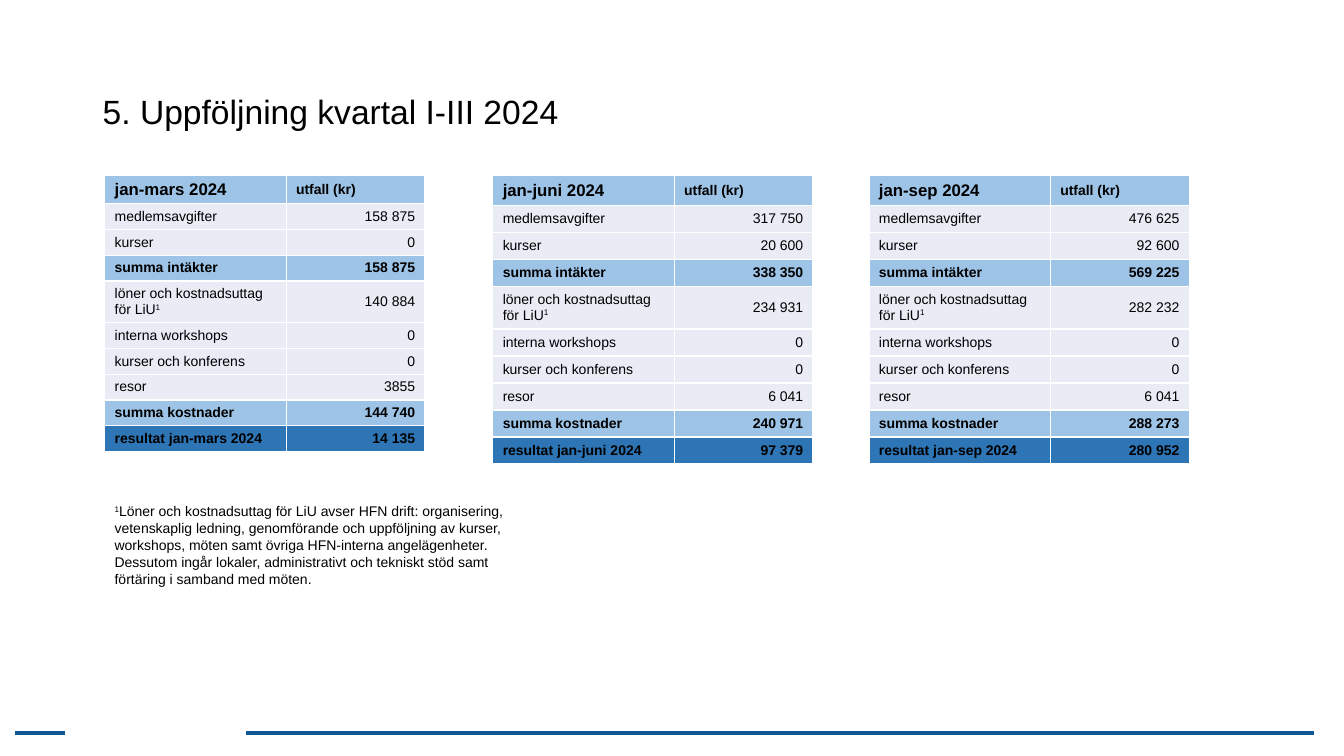
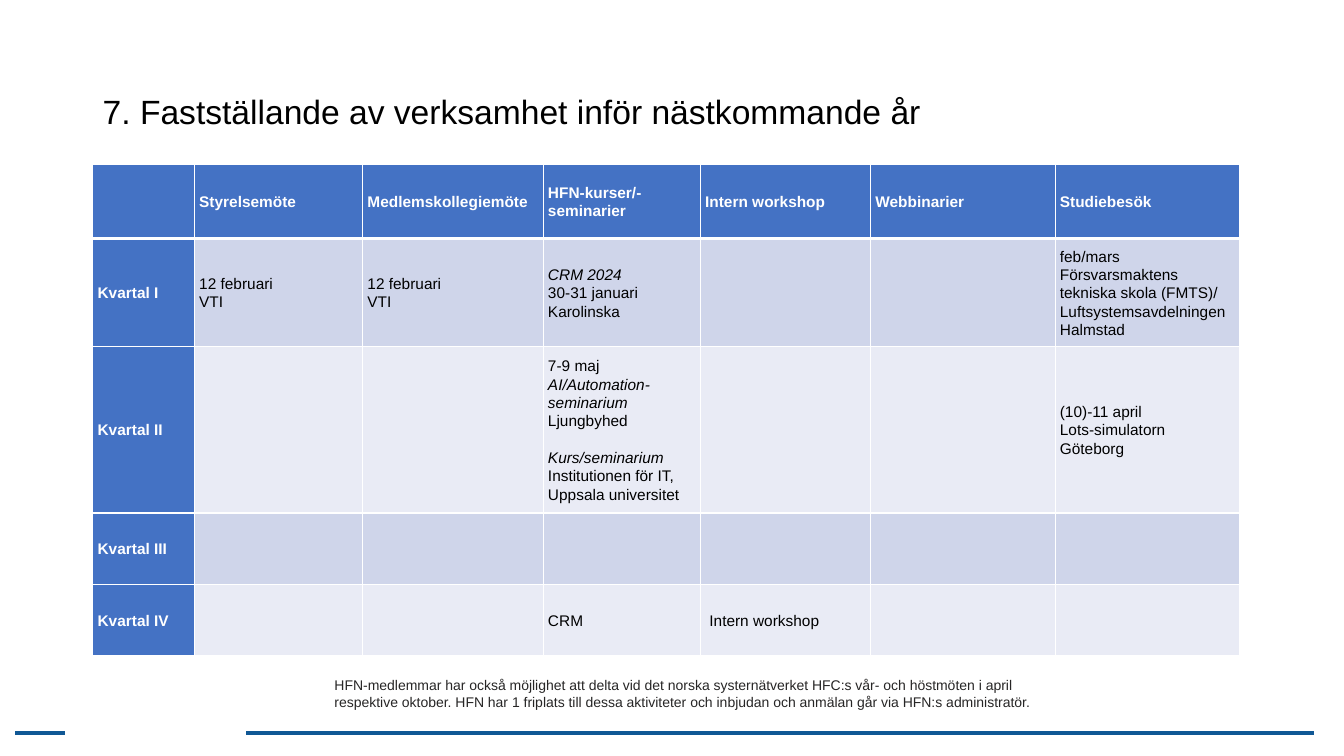
from pptx import Presentation
from pptx.dml.color import RGBColor
from pptx.enum.shapes import MSO_CONNECTOR
from pptx.enum.text import MSO_ANCHOR, PP_ALIGN
from pptx.oxml.xmlchemy import OxmlElement
from pptx.util import Cm, Pt

STRAIGHT = MSO_CONNECTOR.STRAIGHT
MIDDLE, TOP = MSO_ANCHOR.MIDDLE, MSO_ANCHOR.TOP
LEFT, RIGHT = PP_ALIGN.LEFT, PP_ALIGN.RIGHT

FONT = "Arial"
COLORS = {
    "black": "000000",
    "white": "FFFFFF",
    "note": "272626",
    "rule": "105895",
    "sum": "9DC3E6",
    "result": "2E75B6",
    "head": "4472C4",
    "band": "CFD5EA",
    "pale": "E9EBF5",
}

BUDGET_LABELS = [
    "medlemsavgifter", "kurser", "summa intäkter",
    "löner och kostnadsuttag för LiU^1^", "interna workshops",
    "kurser och konferens", "resor", "summa kostnader",
]
# period, left, row heights (header, normal, two lines), amounts
BUDGETS = [
    ("jan-mars 2024", 2.64, (0.7, 0.65, 1.03),
     ["158 875", "0", "158 875", "140 884", "0", "0", "3855", "144 740", "14 135"]),
    ("jan-juni 2024", 12.42, (0.75, 0.68, 1.08),
     ["317 750", "20 600", "338 350", "234 931", "0", "0", "6 041", "240 971", "97 379"]),
    ("jan-sep 2024", 21.9, (0.75, 0.68, 1.08),
     ["476 625", "92 600", "569 225", "282 232", "0", "0", "6 041", "288 273", "280 952"]),
]
BUDGET_NOTE = (
    "^1^Löner och kostnadsuttag för LiU avser HFN drift: organisering, vetenskaplig "
    "ledning, genomförande och uppföljning av kurser, workshops, möten samt övriga "
    "HFN-interna angelägenheter. Dessutom ingår lokaler, administrativt och tekniskt "
    "stöd samt förtäring i samband med möten."
)

PLAN_COLS = [2.56, 4.24, 4.55, 3.96, 4.29, 4.65, 4.65]
PLAN_ROWS = [1.86, 2.57, 3.96, 1.8, 1.8]
PLAN = [
    ["", "Styrelsemöte", "Medlemskollegiemöte", "HFN-kurser/-seminarier",
     "Intern workshop", "Webbinarier", "Studiebesök"],
    ["Kvartal I", "12 februari\nVTI", "12 februari\nVTI",
     "*CRM 2024*\n30-31 januari Karolinska", "", "",
     "feb/mars\nFörsvarsmaktens tekniska skola (FMTS)/ Luftsystemsavdelningen Halmstad"],
    ["Kvartal II", "", "",
     "7-9 maj\n*AI/Automation-seminarium *Ljungbyhed\n"
     "*Kurs/seminarium*\nInstitutionen för IT, Uppsala universitet",
     "", "", "(10)-11 april\nLots-simulatorn\nGöteborg"],
    ["Kvartal III", "", "", "", "", "", ""],
    ["Kvartal IV", "", "", "CRM", " Intern workshop", "", ""],
]
PLAN_NOTE = (
    "HFN-medlemmar har också möjlighet att delta vid det norska systernätverket HFC:s "
    "vår- och höstmöten i april respektive oktober. HFN har 1 friplats till dessa "
    "aktiviteter och inbjudan och anmälan går via HFN:s administratör."
)


def rgb(name):
    return RGBColor.from_string(COLORS[name])


def add_runs(p, text):
    """Add runs; *...* marks italic and ^...^ marks superscript."""
    for i, part in enumerate(text.split("*")):
        for j, piece in enumerate(part.split("^")):
            if not piece:
                continue
            r = p.add_run()
            r.text = piece
            if i % 2:
                r.font.italic = True
            if j % 2:
                r.font._element.set("baseline", "30000")


def write(tf, text, size, color="black", bold=False, align=LEFT, spacing=None):
    for i, line in enumerate(text.split("\n")):
        p = tf.add_paragraph() if i else tf.paragraphs[0]
        add_runs(p, line)
        p.alignment = align
        p.line_spacing = spacing
        p.font.name, p.font.size = FONT, Pt(size)
        p.font.bold = bold
        p.font.color.rgb = rgb(color)


def add_text(s, text, box, size, color="black", anchor=TOP, spacing=None):
    tf = s.shapes.add_textbox(*map(Cm, box)).text_frame
    tf.word_wrap = True
    tf.vertical_anchor = anchor
    write(tf, text, size, color, spacing=spacing)


def add_rule(s, x1, x2, y=18.47):
    c = s.shapes.add_connector(STRAIGHT, Cm(x1), Cm(y), Cm(x2), Cm(y))
    c.line.color.rgb = rgb("rule")
    c.line.width = Pt(2.25)
    c._element.spPr.append(OxmlElement("a:effectLst"))


def new_slide(prs, title):
    s = prs.slides.add_slide(prs.slide_layouts[6])
    add_rule(s, 6.2, 33.12)
    add_rule(s, 0.38, 1.65)
    add_text(s, title, (2.34, 1.02, 29.21, 3.68), 24, anchor=MIDDLE, spacing=0.9)
    return s


def add_grid(s, left, top, cols, rows):
    """Add a table without preset style effects, with the given sizes."""
    frame = s.shapes.add_table(len(rows), len(cols), Cm(left), Cm(top),
                               Cm(sum(cols)), Cm(sum(rows)))
    table = frame.table
    table.first_row = table.horz_banding = False
    for col, width in zip(table.columns, cols):
        col.width = Cm(width)
    for row, height in zip(table.rows, rows):
        row.height = Cm(height)
    return table


def style_cell(cell, fill, margin_x, margin_y, top=1, bottom=1):
    """Set white borders (top and bottom in points), fill and margins."""
    tcPr = cell._tc.get_or_add_tcPr()
    for tag, width in (("lnL", 1), ("lnR", 1), ("lnT", top), ("lnB", bottom)):
        ln = OxmlElement("a:" + tag)
        ln.set("w", str(Pt(width)))
        solid, clr = OxmlElement("a:solidFill"), OxmlElement("a:srgbClr")
        clr.set("val", COLORS["white"])
        solid.append(clr)
        ln.append(solid)
        tcPr.append(ln)
    cell.fill.solid()
    cell.fill.fore_color.rgb = rgb(fill)
    cell.vertical_anchor = MIDDLE
    cell.margin_left = cell.margin_right = Cm(margin_x)
    cell.margin_top = cell.margin_bottom = Cm(margin_y)


def add_budget(s, period, left, heights, amounts):
    head, normal, tall = heights
    labels = BUDGET_LABELS + ["resultat " + period]
    rows = [head] + [tall if "^" in label else normal for label in labels]
    table = add_grid(s, left, 4.42, [4.57, 3.5], rows)
    content = [(period, "utfall (kr)"), *zip(labels, amounts)]
    for i, (label, amount) in enumerate(content):
        if label.startswith("resultat"):
            fill = "result"
        else:
            fill = "sum" if i == 0 or label.startswith("summa") else "pale"
        bold = fill != "pale"
        for cell in table.rows[i].cells:
            style_cell(cell, fill, 0.25, 0.1)
        write(table.cell(i, 0).text_frame, label, 10 if i else 12, bold=bold)
        write(table.cell(i, 1).text_frame, amount, 10, bold=bold,
              align=RIGHT if i else LEFT)


def add_plan(s):
    table = add_grid(s, 2.34, 4.15, PLAN_COLS, PLAN_ROWS)
    for i, row in enumerate(PLAN):
        for j, text in enumerate(row):
            cell = table.cell(i, j)
            is_head = i == 0 or j == 0
            fill = "head" if is_head else ("band" if i % 2 else "pale")
            style_cell(cell, fill, 0.12, 0.12, top=3 if i == 1 else 1,
                       bottom=1 if i else 3)
            write(cell.text_frame, text, 11, "white" if is_head else "black",
                  is_head, spacing=1.07)
    second_course = table.cell(2, 3).text_frame.paragraphs[2]
    second_course.space_before = Pt(13)


def main():
    prs = Presentation()
    prs.slide_width, prs.slide_height = Cm(33.87), Cm(19.05)

    s = new_slide(prs, "5. Uppföljning kvartal I-III 2024")
    for budget in BUDGETS:
        add_budget(s, *budget)
    add_text(s, BUDGET_NOTE, (2.64, 12.55, 10.62, 2.39), 10)

    s = new_slide(prs, "7. Fastställande av verksamhet inför nästkommande år")
    add_plan(s)
    add_text(s, PLAN_NOTE, (8.18, 16.92, 18.95, 1.12), 10, "note")

    prs.save("out.pptx")


if __name__ == "__main__":
    main()
